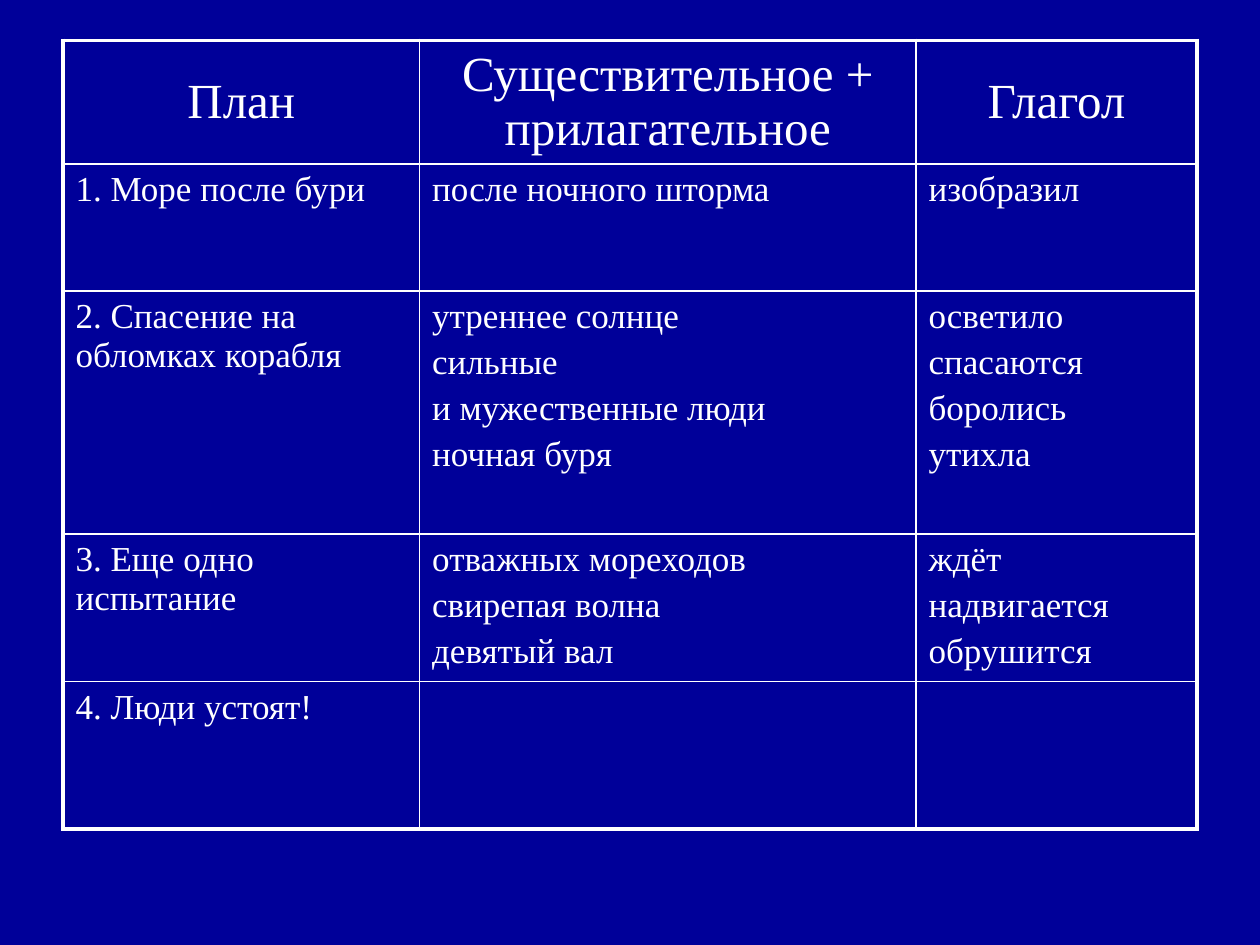
from dataclasses import dataclass

from lxml.etree import SubElement
from pptx import Presentation
from pptx.dml.color import RGBColor
from pptx.enum.text import MSO_ANCHOR, PP_ALIGN
from pptx.oxml.ns import qn
from pptx.util import Inches, Pt


@dataclass(frozen=True)
class Theme:
    background: str = "000099"
    ink: str = "FFFFFF"
    font: str = "Times New Roman"
    header_size: int = 28
    body_size: int = 20
    outer_line: float = 2.25
    inner_line: float = 1


THEME = Theme()

COLUMN_WIDTHS = [2.83, 3.94, 2.23]
ROW_HEIGHTS = [0.98, 1.01, 1.93, 1.17, 1.17]

# Each cell is a list of paragraphs
CONTENT = [
    [["План"], ["Существительное + прилагательное"], ["Глагол"]],
    [["1. Море после бури"], ["после ночного шторма"], ["изобразил"]],
    [["2. Спасение на обломках корабля"],
     ["утреннее солнце", "сильные", "и мужественные люди", "ночная буря"],
     ["осветило", "спасаются", "боролись", "утихла"]],
    [["3. Еще одно испытание"],
     ["отважных мореходов", "свирепая волна", "девятый вал"],
     ["ждёт", "надвигается", "обрушится"]],
    [["4. Люди устоят!"], [], []],
]


def write_text(frame, lines, size, align=PP_ALIGN.LEFT):
    """Fill a text frame, one paragraph per line."""
    for index, line in enumerate(lines):
        para = frame.add_paragraph() if index else frame.paragraphs[0]
        para.alignment = align
        para.space_before = Pt(size * 0.2 if index else 0)
        span = para.add_run()
        span.text = line
        span.font.name = THEME.font
        span.font.size = Pt(size)
        span.font.color.rgb = RGBColor.from_string(THEME.ink)


def set_borders(cell, outer_sides):
    """Draw the four cell borders, heavier along the table's edge."""
    properties = cell._tc.get_or_add_tcPr()
    for side, is_outer in outer_sides.items():
        width = THEME.outer_line if is_outer else THEME.inner_line
        line = SubElement(properties, qn(f"a:ln{side}"), w=str(Pt(width)))
        fill = SubElement(line, qn("a:solidFill"))
        SubElement(fill, qn("a:srgbClr"), val=THEME.ink)


def add_plan_table(page, left, top):
    row_count, column_count = len(ROW_HEIGHTS), len(COLUMN_WIDTHS)
    table = page.shapes.add_table(
        row_count, column_count, Inches(left), Inches(top),
        Inches(sum(COLUMN_WIDTHS)), Inches(sum(ROW_HEIGHTS))).table
    table.first_row = table.horz_banding = False

    # Grid
    for column, width in zip(table.columns, COLUMN_WIDTHS):
        column.width = Inches(width)
    for row, height in zip(table.rows, ROW_HEIGHTS):
        row.height = Inches(height)

    # Cells
    for r, row_content in enumerate(CONTENT):
        for c, lines in enumerate(row_content):
            cell = table.cell(r, c)
            set_borders(cell, {"L": c == 0, "R": c == column_count - 1,
                               "T": r == 0, "B": r == row_count - 1})
            cell.fill.background()
            if r == 0:
                cell.vertical_anchor = MSO_ANCHOR.MIDDLE
                write_text(cell.text_frame, lines, size=THEME.header_size,
                           align=PP_ALIGN.CENTER)
            else:
                write_text(cell.text_frame, lines, size=THEME.body_size)


def main():
    deck = Presentation()
    deck.slide_width, deck.slide_height = Inches(10), Inches(7.5)
    page = deck.slides.add_slide(deck.slide_layouts[6])

    # Background
    fill = page.background.fill
    fill.solid()
    fill.fore_color.rgb = RGBColor.from_string(THEME.background)

    add_plan_table(page, left=0.5, top=0.32)
    deck.save("out.pptx")


if __name__ == "__main__":
    main()
